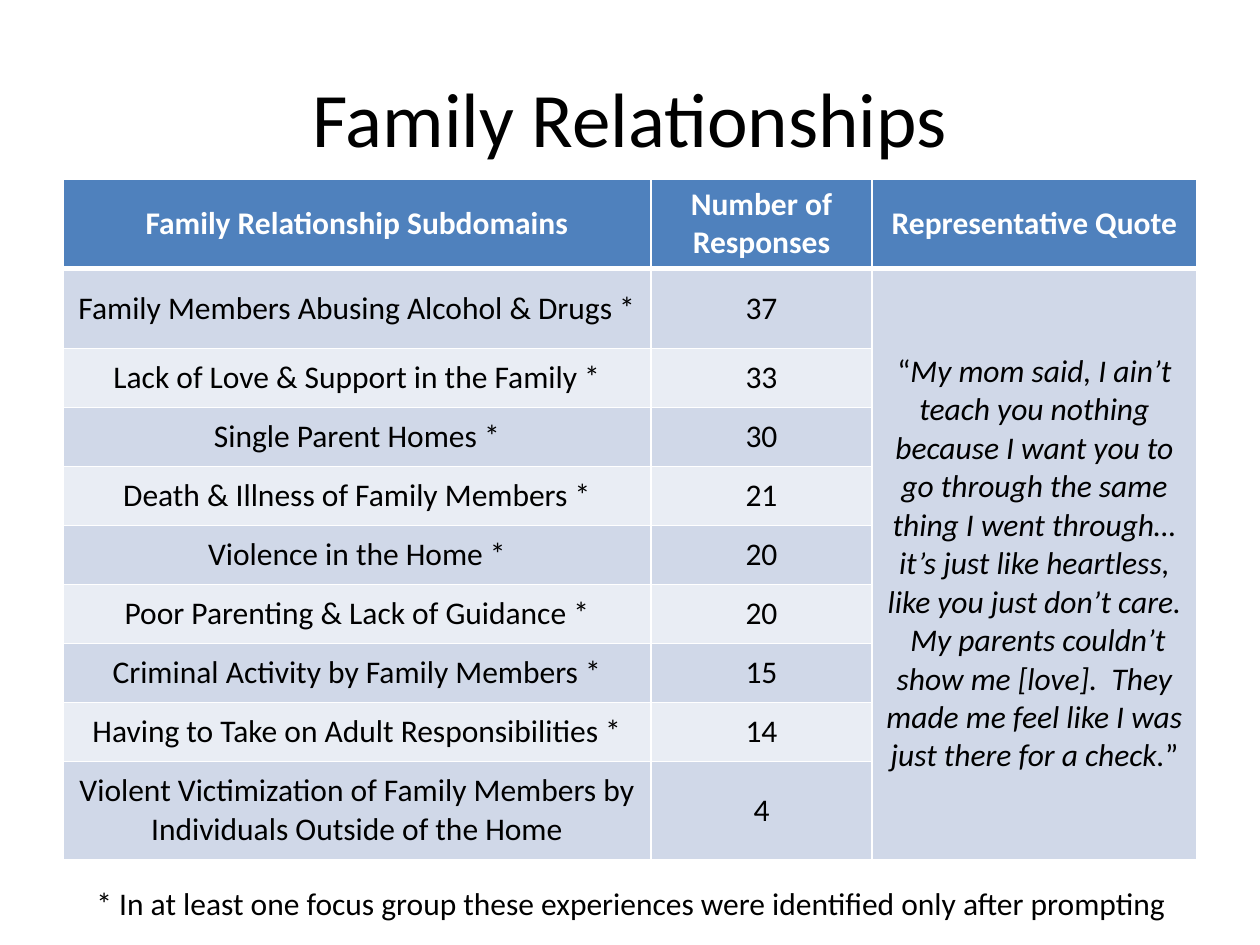
import pptx
import pptx.util
import pptx.dml.color
import pptx.enum.text
import pptx.oxml
import pptx.oxml.ns

RGB = pptx.dml.color.RGBColor
ALIGN = pptx.enum.text.PP_ALIGN
MIDDLE = pptx.enum.text.MSO_ANCHOR.MIDDLE

TITLE = "Family Relationships"
HEADS = ["Family Relationship Subdomains", "Number of Responses", "Representative Quote"]
ROWS = [
    ("Family Members Abusing Alcohol & Drugs *", 37),
    ("Lack of Love & Support in the Family *", 33),
    ("Single Parent Homes *", 30),
    ("Death & Illness of Family Members *", 21),
    ("Violence in the Home *", 20),
    ("Poor Parenting & Lack of Guidance *", 20),
    ("Criminal Activity by Family Members *", 15),
    ("Having to Take on Adult Responsibilities *", 14),
    ("Violent Victimization of Family Members by Individuals Outside of the Home", 4),
]
QUOTE = (
    "My mom said, I ain’t teach you nothing because I want you to go through "
    "the same thing I went through…it’s just like heartless, like you just "
    "don’t care.  My parents couldn’t show me [love].  They made me feel like "
    "I was just there for a check."
)
NOTE = "* In at least one focus group these experiences were identified only after prompting"

BLACK = RGB(0x00, 0x00, 0x00)
WHITE = RGB(0xFF, 0xFF, 0xFF)
BLUE = RGB(0x4F, 0x81, 0xBD)
BANDS = [RGB(0xD0, 0xD8, 0xE8), RGB(0xE9, 0xED, 0xF4)]

WIDTHS = [588, 221, 325]
HEIGHTS = [89, 80] + [59] * 7 + [98]


def px(n):
    return round(n * pptx.util.Inches(1) / 126)


def write(frame, text, size=18, color=BLACK, bold=False, italic=False, align=ALIGN.CENTER):
    """Add a run to the first paragraph of the frame."""
    para = frame.paragraphs[0]
    para.alignment = align
    run = para.add_run()
    run.text = text
    font = run.font
    font.name, font.size = "Calibri", pptx.util.Pt(size)
    font.bold, font.italic, font.color.rgb = bold, italic, color


def paint(cell, fill, base=1):
    """Fill the cell and rule it in white; base is the bottom rule in points."""
    props = cell._tc.get_or_add_tcPr()
    for side, wide in zip("LRTB", (1, 1, 1, base)):
        props.append(pptx.oxml.parse_xml(
            f'<a:ln{side} {pptx.oxml.ns.nsdecls("a")} w="{pptx.util.Pt(wide)}">'
            f'<a:solidFill><a:srgbClr val="{WHITE}"/></a:solidFill></a:ln{side}>'))
    cell.fill.solid()
    cell.fill.fore_color.rgb = fill
    cell.vertical_anchor = MIDDLE


def fill_table(slide):
    frame = slide.shapes.add_table(
        len(HEIGHTS), len(WIDTHS), px(63), px(179), px(sum(WIDTHS)), px(sum(HEIGHTS)))
    table = frame.table
    for col, wide in zip(table.columns, WIDTHS):
        col.width = px(wide)
    for row, high in zip(table.rows, HEIGHTS):
        row.height = px(high)

    for c, head in enumerate(HEADS):
        cell = table.cell(0, c)
        paint(cell, BLUE, base=3)
        write(cell.text_frame, head, color=WHITE, bold=True)
    for r, row in enumerate(ROWS, 1):
        for c, value in enumerate(row):
            cell = table.cell(r, c)
            paint(cell, BANDS[(r - 1) % 2])
            write(cell.text_frame, str(value))

    cell = table.cell(1, 2)
    cell.merge(table.cell(len(ROWS), 2))
    paint(cell, BANDS[0])
    for text, slant in (("“", False), (QUOTE, True), ("”", False)):
        write(cell.text_frame, text, italic=slant)


def main():
    deck = pptx.Presentation()
    deck.slide_width, deck.slide_height = px(1260), px(945)
    slide = deck.slides.add_slide(deck.slide_layouts[5])

    title = slide.shapes.title
    title.left, title.top, title.width, title.height = map(px, (63, 38, 1134, 158))
    title.text_frame.vertical_anchor = MIDDLE
    write(title.text_frame, TITLE, size=44)

    fill_table(slide)

    note = slide.shapes.add_textbox(*map(px, (84, 878, 1113, 50))).text_frame
    note.word_wrap = True
    write(note, NOTE, align=ALIGN.LEFT)
    deck.save("out.pptx")


if __name__ == "__main__":
    main()
